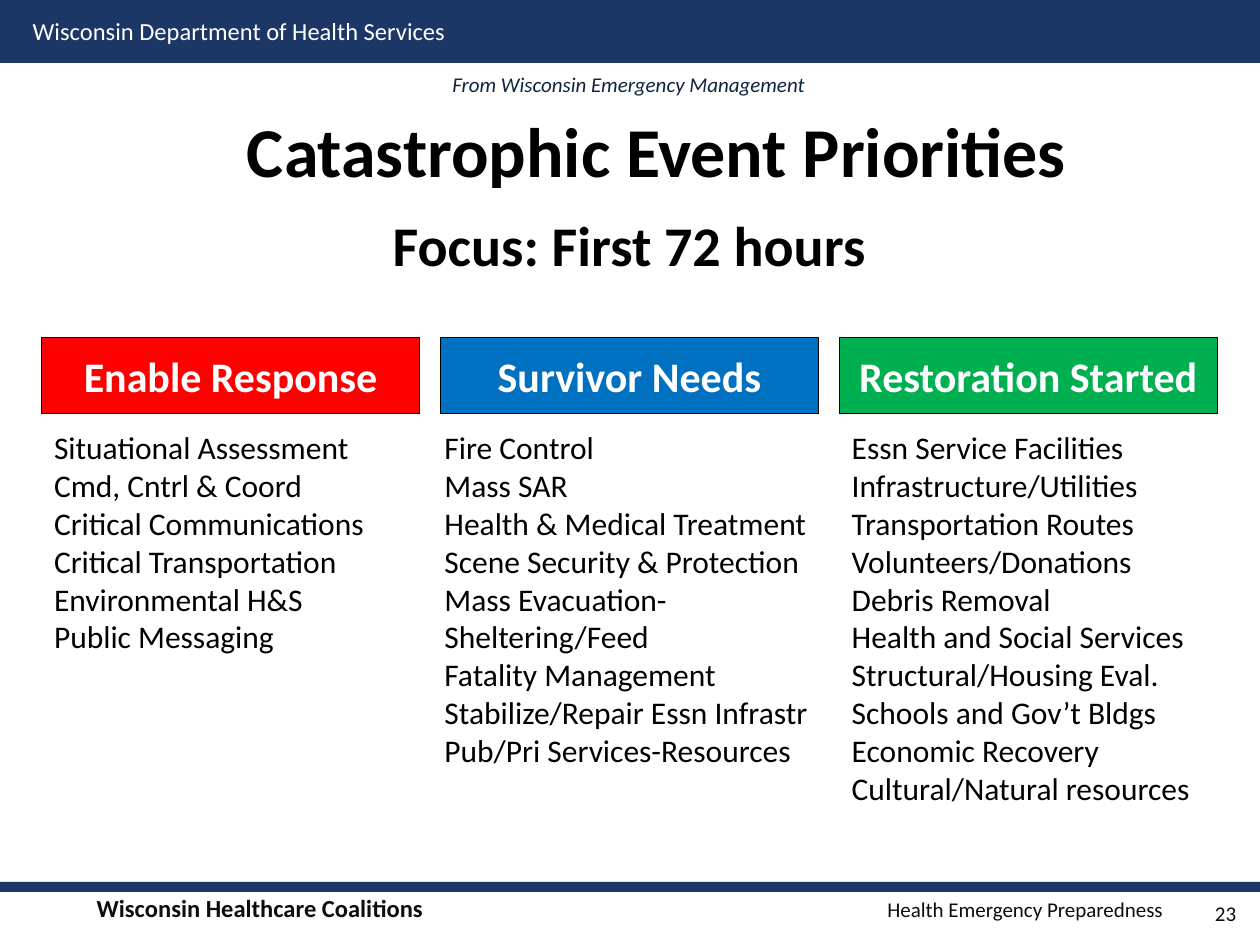
"""Build the slide on priorities for the first 72 hours of a catastrophic event."""
from lxml.etree import SubElement
from pptx import Presentation
from pptx.dml.color import RGBColor
from pptx.enum.shapes import MSO_SHAPE as Shape
from pptx.enum.text import MSO_ANCHOR as Anchor, PP_ALIGN as Align
from pptx.oxml.ns import qn
from pptx.util import Cm, Pt

NAVY = RGBColor(0x1C, 0x36, 0x65)
INK = RGBColor(0x0D, 0x0D, 0x0D)
DARK_BLUE = RGBColor(0x0F, 0x24, 0x3E)
BLACK = RGBColor(0, 0, 0)
WHITE = RGBColor(0xFF, 0xFF, 0xFF)
RED = RGBColor(0xFF, 0, 0)
BLUE = RGBColor(0, 0x70, 0xC0)
GREEN = RGBColor(0, 0xB0, 0x50)

COLUMNS = [
    ("Enable Response", RED, (0.84, 7.47), [
        "Situational Assessment", "Cmd, Cntrl & Coord",
        "Critical Communications", "Critical Transportation",
        "Environmental H&S", "Public Messaging"]),
    ("Survivor Needs", BLUE, (8.71, 7.95), [
        "Fire Control", "Mass SAR", "Health & Medical Treatment",
        "Scene Security & Protection", "Mass Evacuation-Sheltering/Feed",
        "Fatality Management", "Stabilize/Repair Essn Infrastr",
        "Pub/Pri Services-Resources"]),
    ("Restoration Started", GREEN, (16.92, 7.62), [
        "Essn Service Facilities", "Infrastructure/Utilities",
        "Transportation Routes", "Volunteers/Donations", "Debris Removal",
        "Health and Social Services", "Structural/Housing Eval.",
        "Schools and Gov’t Bldgs", "Economic Recovery",
        "Cultural/Natural resources"]),
]
TEXTS = [
    ("Wisconsin Department of Health Services", (0.41, 0.2, 12, 1.45),
     Align.LEFT, Anchor.TOP, 14, WHITE, {}),
    ("From Wisconsin Emergency Management", (8.84, 1.32, 7.67, 0.76),
     Align.CENTER, Anchor.TOP, 12, DARK_BLUE, {"italic": True}),
    ("Catastrophic Event Priorities", (2.34, 1.57, 21.79, 2.87),
     Align.CENTER, Anchor.MIDDLE, 40, BLACK, {"bold": True}),
    ("Focus: First 72 hours", (6.65, 4.11, 12.07, 1.63),
     Align.CENTER, Anchor.MIDDLE, 32, BLACK, {"bold": True}),
    ("23", (23.7, 17.98, 1.47, 0.86),
     Align.RIGHT, Anchor.MIDDLE, 12, INK, {}),
]
BARS = [(0, 0, 25.4, 1.27), (0, 17.78, 25.4, 0.2)]
FOOTER = [("Wisconsin Healthcare Coalitions\t", 14, True),
          ("Health Emergency Preparedness", 12, False)]
FOOTER_PLACE = (1.7, 17.88, 22.02, 0.86)
FOOTER_TAB = 21.5
HEAD_LEFT, HEAD_STEP, HEAD_WIDTH = 0.84, 8.04, 7.62


def add_span(para, text, size, color, bold=False, italic=False):
    span = para.add_run()
    span.text = text
    font = span.font
    font.name, font.size, font.color.rgb = "Calibri", Pt(size), color
    font.bold, font.italic = bold, italic


def add_rectangle(page, place, fill, outline=None):
    box = page.shapes.add_shape(Shape.RECTANGLE, *map(Cm, place))
    box.shadow.inherit = False
    box.fill.solid()
    box.fill.fore_color.rgb = fill
    if outline is None:
        box.line.fill.background()
    else:
        box.line.color.rgb = outline
        box.line.width = Pt(0.75)
    return box


def add_text_frame(page, place):
    frame = page.shapes.add_textbox(*map(Cm, place)).text_frame
    frame.word_wrap = True
    return frame


def add_footer(page):
    para = add_text_frame(page, FOOTER_PLACE).paragraphs[0]
    tabs = SubElement(para._p.get_or_add_pPr(), qn("a:tabLst"))
    SubElement(tabs, qn("a:tab"), pos=str(Cm(FOOTER_TAB)), algn="r")
    for text, size, bold in FOOTER:
        add_span(para, text, size, INK, bold)


def add_column(page, index, heading, color, list_place, items):
    left = HEAD_LEFT + index * HEAD_STEP
    box = add_rectangle(page, (left, 6.8, HEAD_WIDTH, 1.54), color, BLACK)
    frame = box.text_frame
    frame.word_wrap = True
    frame.vertical_anchor = Anchor.MIDDLE
    para = frame.paragraphs[0]
    para.alignment = Align.CENTER
    add_span(para, heading, 24, WHITE, bold=True)

    list_left, list_width = list_place
    frame = add_text_frame(page, (list_left, 8.51, list_width, 8.64))
    for number, item in enumerate(items):
        para = frame.add_paragraph() if number else frame.paragraphs[0]
        add_span(para, item, 18, BLACK)


def main():
    deck = Presentation()
    deck.slide_width, deck.slide_height = Cm(25.4), Cm(19.05)
    page = deck.slides.add_slide(deck.slide_layouts[6])
    for place in BARS:
        add_rectangle(page, place, NAVY)
    add_footer(page)
    for text, place, align, anchor, size, color, style in TEXTS:
        frame = add_text_frame(page, place)
        frame.vertical_anchor = anchor
        para = frame.paragraphs[0]
        para.alignment = align
        add_span(para, text, size, color, **style)
    for index, column in enumerate(COLUMNS):
        add_column(page, index, *column)
    deck.save("out.pptx")


if __name__ == "__main__":
    main()
